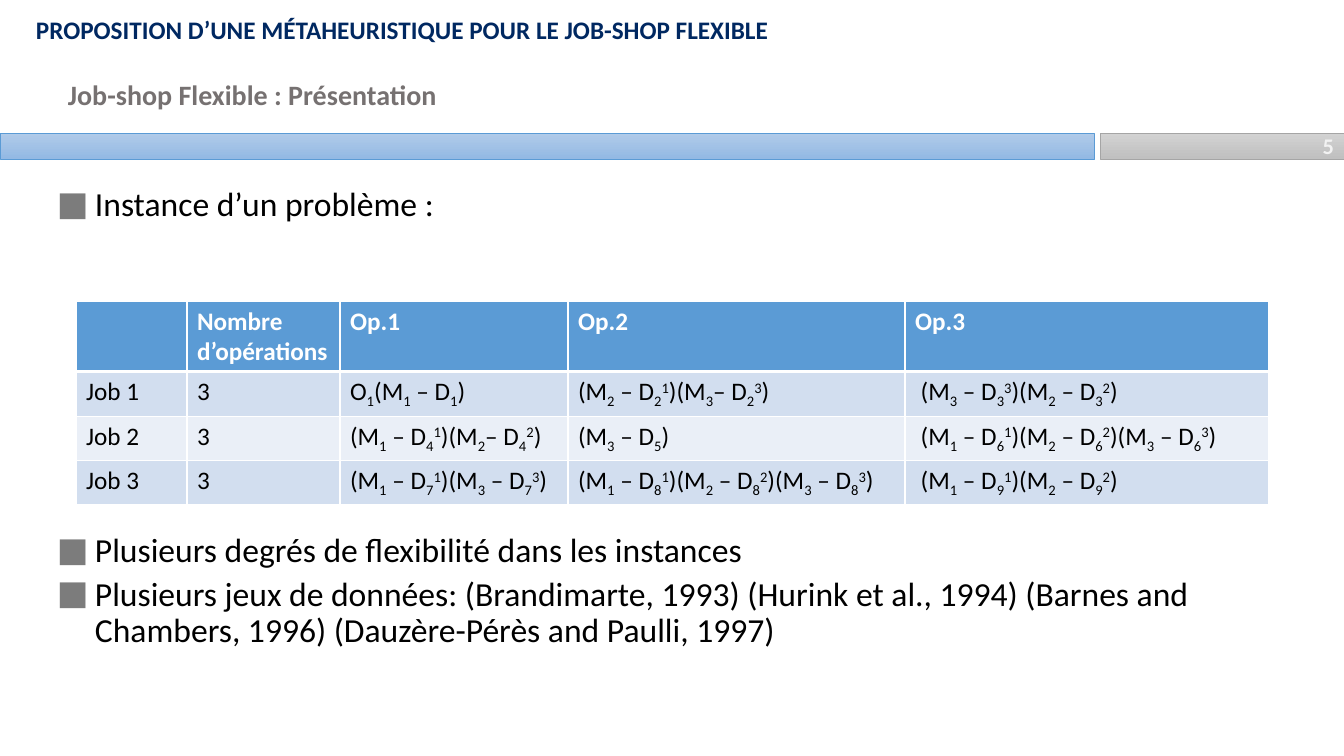
import dataclasses
import pptx
import pptx.util
import pptx.dml.color
import pptx.enum.shapes
import pptx.enum.text
import pptx.oxml
import pptx.oxml.ns

SCALE = 914400 / 100.8


@dataclasses.dataclass(frozen=True)
class Theme:
    font: str = "Calibri"
    navy: str = "002861"
    grey: str = "767171"
    mark: str = "7C7C7C"
    pale: str = "F2F2F2"
    black: str = "000000"
    white: str = "FFFFFF"
    head: str = "5B9BD5"
    bands: tuple = ("D2DEEF", "EAEFF7")
    blue: tuple = ("B1CBE9", "93B9E4", "5B9BD5")
    steel: tuple = ("D2D2D2", "C0C0C0", "A5A5A5")
    page: int = 16
    small: int = 18
    title: int = 20
    body: int = 24


THEME = Theme()
COLS = (111, 153, 228, 337, 364)
ROWS = (70, 44, 44, 44)
JOBS = (
    ("", "Nombre d’opérations", "Op.1", "Op.2", "Op.3"),
    ("Job 1", "3", "O_1(M_1 – D_1)", "(M_2 – D_2^1)(M_3– D_2^3)",
     " (M_3 – D_3^3)(M_2 – D_3^2)"),
    ("Job 2", "3", "(M_1 – D_4^1)(M_2– D_4^2)", "(M_3 – D_5)",
     " (M_1 – D_6^1)(M_2 – D_6^2)(M_3 – D_6^3)"),
    ("Job 3", "3", "(M_1 – D_7^1)(M_3 – D_7^3)",
     "(M_1 – D_8^1)(M_2 – D_8^2)(M_3 – D_8^3)",
     " (M_1 – D_9^1)(M_2 – D_9^2)"),
)
NOTES = (
    "Plusieurs degrés de flexibilité dans les instances",
    "Plusieurs jeux de données: (Brandimarte, 1993) (Hurink et al., 1994) "
    "(Barnes and Chambers, 1996) (Dauzère-Pérès and Paulli, 1997)",
)


def px(size):
    return pptx.util.Emu(round(size * SCALE))


def rgb(code):
    return pptx.dml.color.RGBColor.from_string(code)


def node(parent, xml):
    """Append an element written with the a: prefix."""
    space = pptx.oxml.ns.nsdecls("a")
    tag, rest = xml[:xml.index(" ")], xml[xml.index(" "):]
    parent.append(pptx.oxml.parse_xml(f"{tag} {space}{rest}"))


def add_run(para, text, size, color, bold=False, base=0):
    run = para.add_run()
    run.text = text
    font = run.font
    font.name, font.size, font.bold = THEME.font, pptx.util.Pt(size), bold
    font.color.rgb = rgb(color)
    if base:
        font._element.set("baseline", str(base * 1000))


def add_math(para, text, color, bold):
    """Add runs; _ lowers and ^ raises the one digit that follows."""
    for part in text.replace("_", "|_").replace("^", "|^").split("|"):
        base = {"_": -25, "^": 30}.get(part[:1], 0)
        if base:
            add_run(para, part[1], THEME.small, color, bold, base)
            part = part[2:]
        if part:
            add_run(para, part, THEME.small, color, bold)


def add_box(slide, *place, wrap=True):
    frame = slide.shapes.add_textbox(*map(px, place)).text_frame
    frame.word_wrap = wrap
    return frame


def add_label(slide, place, text, size, color, wrap=True):
    frame = add_box(slide, *place, wrap=wrap)
    add_run(frame.paragraphs[0], text, size, color, True)
    return frame


def add_bar(slide, place, tones):
    kind = pptx.enum.shapes.MSO_SHAPE.RECTANGLE
    bar = slide.shapes.add_shape(kind, *map(px, place))
    bar.shadow.inherit = False
    bar.fill.gradient()
    bar.fill.gradient_angle = 270
    for stop, tone in zip(bar.fill.gradient_stops, tones):
        stop.color.rgb = rgb(tone)
    bar.line.color.rgb = rgb(tones[-1])
    bar.line.width = pptx.util.Pt(0.5)


def add_list(slide, place, items):
    frame = add_box(slide, *place)
    for i, item in enumerate(items):
        para = frame.add_paragraph() if i else frame.paragraphs[0]
        para.line_spacing = 0.9
        para.space_before = pptx.util.Pt(5)
        props = para._p.get_or_add_pPr()
        props.set("marL", str(px(42)))
        props.set("indent", str(px(-38)))
        node(props, f'<a:buClr ><a:srgbClr val="{THEME.mark}"/></a:buClr>')
        node(props, f'<a:buFont typeface="{THEME.font}"/>')
        node(props, '<a:buChar char="■"/>')
        add_run(para, item, THEME.body, THEME.black)


def set_edges(cell, top, bottom):
    props = cell._tc.get_or_add_tcPr()
    for side, width in zip("LRTB", (1, 1, top, bottom)):
        node(props, f'<a:ln{side} w="{pptx.util.Pt(width)}"><a:solidFill>'
                    f'<a:srgbClr val="{THEME.white}"/></a:solidFill></a:ln{side}>')


def add_jobs(slide, left, top):
    grid = slide.shapes.add_table(len(ROWS), len(COLS), px(left), px(top),
                                  px(sum(COLS)), px(sum(ROWS))).table
    for col, width in zip(grid.columns, COLS):
        col.width = px(width)
    for r, (row, high, texts) in enumerate(zip(grid.rows, ROWS, JOBS)):
        row.height = px(high)
        head = r == 0
        for cell, text in zip(row.cells, texts):
            set_edges(cell, 3 if r == 1 else 1, 3 if head else 1)
            cell.fill.solid()
            cell.fill.fore_color.rgb = rgb(
                THEME.head if head else THEME.bands[(r - 1) % 2])
            color = THEME.white if head else THEME.black
            add_math(cell.text_frame.paragraphs[0], text, color, head)


def main():
    deck = pptx.Presentation()
    deck.slide_width, deck.slide_height = px(1344), px(756)
    slide = deck.slides.add_slide(deck.slide_layouts[6])

    add_bar(slide, (1100, 133, 244, 26), THEME.steel)
    page = add_label(slide, (1100, 126, 244, 40), "5", THEME.page, THEME.pale)
    page.vertical_anchor = pptx.enum.text.MSO_ANCHOR.MIDDLE
    page.paragraphs[0].alignment = pptx.enum.text.PP_ALIGN.RIGHT
    add_label(slide, (58, 73, 392, 44), "Job-shop Flexible : Présentation",
              THEME.title, THEME.grey, wrap=False)
    add_bar(slide, (0, 133, 1094, 26), THEME.blue)
    add_label(slide, (26, 9, 1144, 40),
              "PROPOSITION D’UNE MÉTAHEURISTIQUE POUR LE JOB-SHOP FLEXIBLE",
              THEME.small, THEME.navy)

    add_list(slide, (43, 183, 1266, 60), ("Instance d’un problème :",))
    add_jobs(slide, 76, 301)
    add_list(slide, (43, 529, 1266, 192), NOTES)
    deck.save("out.pptx")


if __name__ == "__main__":
    main()
